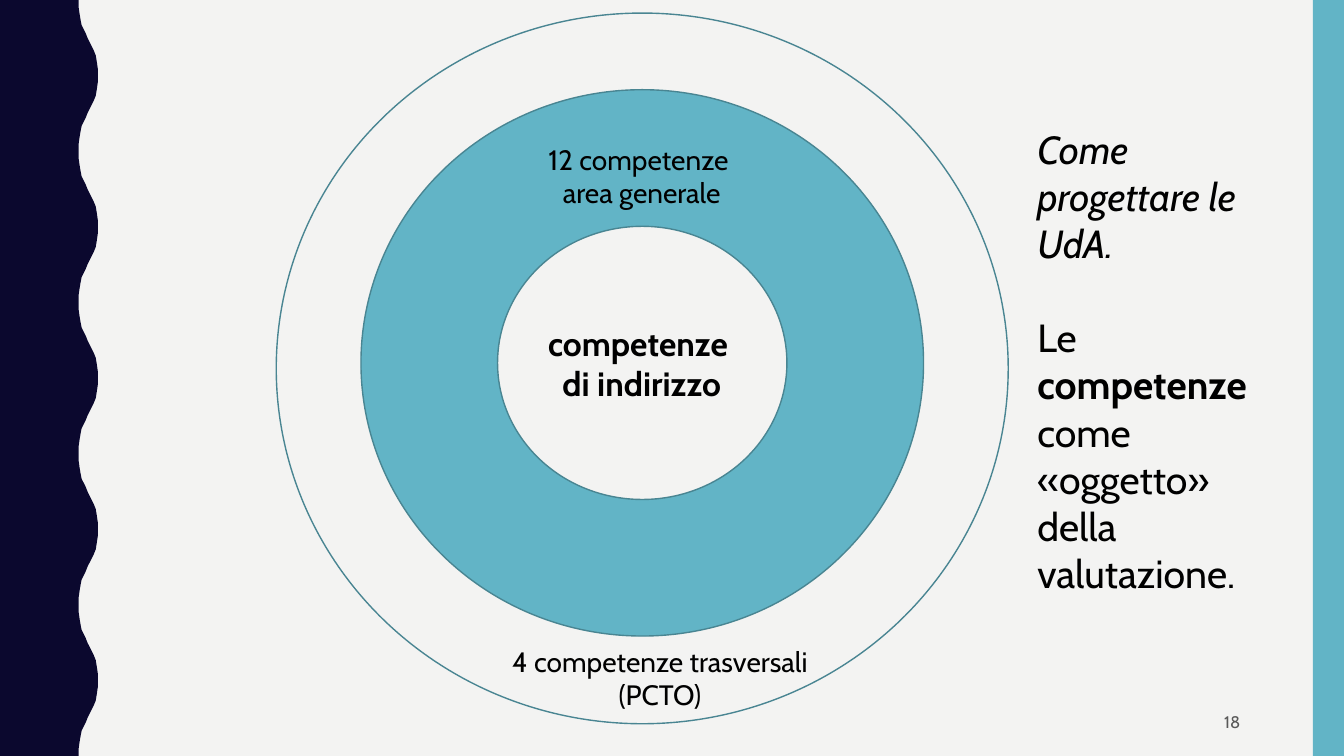
from dataclasses import dataclass

from pptx import Presentation
from pptx.dml.color import RGBColor
from pptx.enum.shapes import MSO_SHAPE
from pptx.enum.text import MSO_ANCHOR, PP_ALIGN
from pptx.shapes.autoshape import Shape
from pptx.slide import Slide
from pptx.util import Inches, Pt

RECTANGLE, DONUT, ELLIPSE = MSO_SHAPE.RECTANGLE, MSO_SHAPE.DONUT, MSO_SHAPE.OVAL
TOP, MIDDLE = MSO_ANCHOR.TOP, MSO_ANCHOR.MIDDLE
LEFT, CENTER, RIGHT = PP_ALIGN.LEFT, PP_ALIGN.CENTER, PP_ALIGN.RIGHT

FONT = "Cabin"
COLORS = {
    "background": "F3F3F2",
    "wave": "0B082E",
    "teal": "62B4C6",
    "outline": "498592",
    "text": "000000",
    "number": "595959",
}
SLIDE_WIDTH, SLIDE_HEIGHT = 13.33, 7.5

# One swing of the wave edge, from its trough to its crest: (x, y offset)
SWING_HEIGHT = 0.75
SWING = [
    (0.78, 0), (0.78, 0.07), (0.79, 0.14), (0.8, 0.2), (0.81, 0.25),
    (0.83, 0.29), (0.85, 0.33), (0.87, 0.38), (0.89, 0.42), (0.91, 0.46),
    (0.93, 0.5), (0.95, 0.55), (0.96, 0.61), (0.97, 0.68), (0.97, 0.75),
]


@dataclass(frozen=True)
class Area:
    left: float
    top: float
    width: float
    height: float

    def lengths(self) -> list[Inches]:
        return [Inches(value) for value in (self.left, self.top, self.width, self.height)]


@dataclass(frozen=True)
class Figure:
    preset: MSO_SHAPE
    area: Area
    fill: str | None = None
    line: str | None = None


@dataclass(frozen=True)
class Span:
    text: str
    bold: bool = False
    italic: bool = False


@dataclass(frozen=True)
class Label:
    area: Area
    size: int
    paragraphs: list[list[Span]]
    align: PP_ALIGN = CENTER
    anchor: MSO_ANCHOR = TOP
    color: str = "text"
    gap: int = 0


FIGURES = [
    Figure(RECTANGLE, Area(13.02, 0, 0.31, SLIDE_HEIGHT), fill="teal"),
    Figure(DONUT, Area(3.58, 0.89, 5.58, 5.42), fill="teal", line="outline"),
    Figure(ELLIPSE, Area(2.74, 0.13, 7.26, 7.05), line="outline"),
]
LABELS = [
    Label(Area(9.32, 6.97, 3.08, 0.38), 12, [[Span("18")]], RIGHT, MIDDLE, "number"),
    Label(Area(5.26, 3.15, 2.21, 0.91), 24,
          [[Span("competenze ", bold=True)], [Span("di indirizzo", bold=True)]]),
    Label(Area(5.1, 1.36, 2.53, 0.77), 20,
          [[Span("12 competenze ")], [Span("area generale")]]),
    Label(Area(4.77, 6.34, 3.55, 0.77), 20,
          [[Span("4 competenze trasversali")], [Span("(PCTO)")]]),
    Label(Area(10.19, 1.19, 2.55, 4.81), 28,
          [[Span("Come progettare le UdA.", italic=True)],
           [Span("Le "), Span("competenze", bold=True),
            Span(" come «oggetto» della valutazione.")]],
          LEFT, gap=34),
]


def rgb(name: str) -> RGBColor:
    return RGBColor.from_string(COLORS[name])


def paint(shape: Shape, fill: str | None, line: str | None) -> None:
    shape.shadow.inherit = False
    if fill:
        shape.fill.solid()
        shape.fill.fore_color.rgb = rgb(fill)
    else:
        shape.fill.background()
    if line:
        shape.line.color.rgb = rgb(line)
        shape.line.width = Pt(1)
    else:
        shape.line.fill.background()


def draw_wave(slide: Slide) -> None:
    """Draw the left band, whose right edge repeats SWING, mirrored every other time."""
    mirrored = [(x, SWING_HEIGHT - y) for x, y in reversed(SWING)]
    edge = [
        (x, index * SWING_HEIGHT + y)
        for index in range(round(SLIDE_HEIGHT / SWING_HEIGHT))
        for x, y in (mirrored if index % 2 else SWING)
    ]
    builder = slide.shapes.build_freeform(0, 0)
    builder.add_line_segments(
        [(Inches(x), Inches(y)) for x, y in edge + [(0, SLIDE_HEIGHT)]], close=True
    )
    paint(builder.convert_to_shape(), "wave", None)


def draw_figure(slide: Slide, figure: Figure) -> None:
    shape = slide.shapes.add_shape(figure.preset, *figure.area.lengths())
    paint(shape, figure.fill, figure.line)


def draw_label(slide: Slide, label: Label) -> None:
    frame = slide.shapes.add_textbox(*label.area.lengths()).text_frame
    frame.word_wrap = True
    frame.vertical_anchor = label.anchor
    for index, spans in enumerate(label.paragraphs):
        para = frame.add_paragraph() if index else frame.paragraphs[0]
        para.alignment = label.align
        if index:
            para.space_before = Pt(label.gap)
        for span in spans:
            run = para.add_run()
            run.text = span.text
            font = run.font
            font.name, font.size = FONT, Pt(label.size)
            font.bold, font.italic = span.bold, span.italic
            font.color.rgb = rgb(label.color)


def main() -> None:
    deck = Presentation()
    deck.slide_width, deck.slide_height = Inches(SLIDE_WIDTH), Inches(SLIDE_HEIGHT)
    slide = deck.slides.add_slide(deck.slide_layouts[6])
    slide.background.fill.solid()
    slide.background.fill.fore_color.rgb = rgb("background")
    draw_wave(slide)
    for figure in FIGURES:
        draw_figure(slide, figure)
    for label in LABELS:
        draw_label(slide, label)
    deck.save("out.pptx")


if __name__ == "__main__":
    main()
